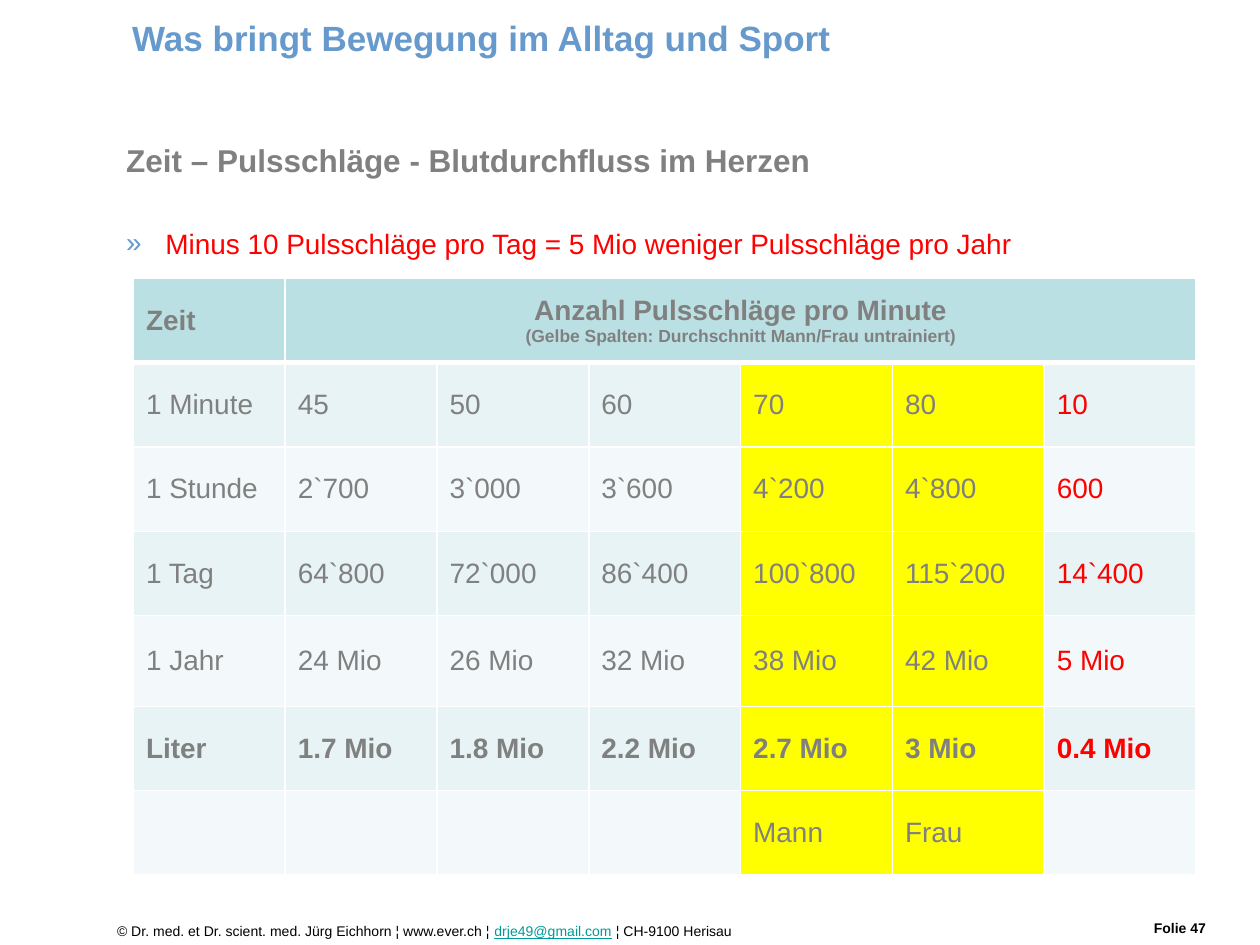
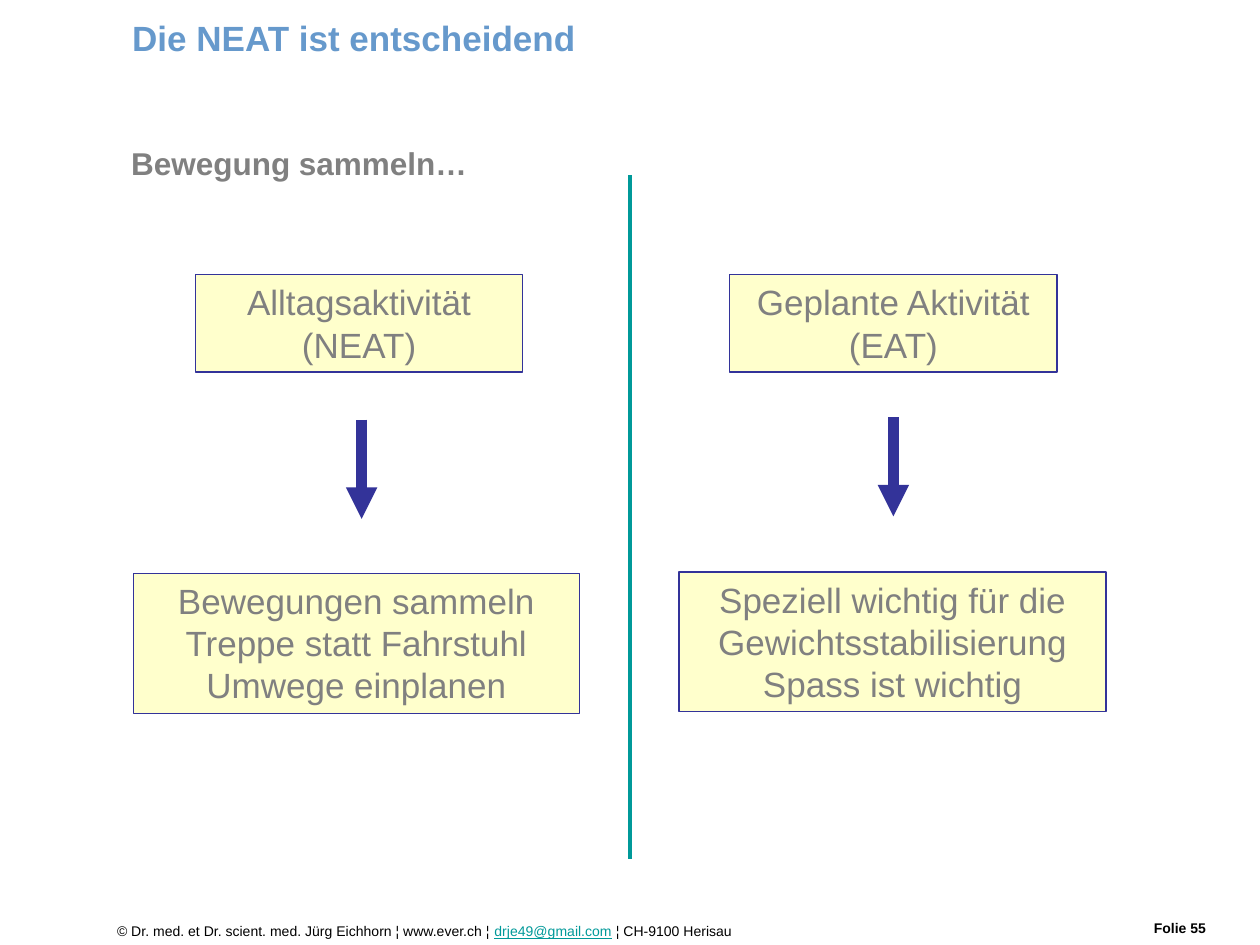
from lxml.etree import SubElement
from pptx import Presentation
from pptx.dml.color import RGBColor
from pptx.enum.shapes import MSO_CONNECTOR, MSO_SHAPE
from pptx.enum.text import MSO_ANCHOR, MSO_AUTO_SIZE, PP_ALIGN
from pptx.oxml import parse_xml
from pptx.oxml.ns import nsdecls, qn
from pptx.util import Cm, Pt

# Colours and font
FONT = "Arial"
BLUE = RGBColor(0x66, 0x99, 0xCC)
GREY = RGBColor(0x80, 0x80, 0x80)
RED = RGBColor(0xFF, 0x00, 0x00)
BLACK = RGBColor(0x00, 0x00, 0x00)
WHITE = RGBColor(0xFF, 0xFF, 0xFF)
TEAL = RGBColor(0x00, 0x99, 0x99)
NAVY = RGBColor(0x33, 0x33, 0x99)
CREAM = RGBColor(0xFF, 0xFF, 0xCC)
YELLOW = RGBColor(0xFF, 0xFF, 0x00)
HEADER_FILL = RGBColor(0xBB, 0xE0, 0xE3)
BAND_FILLS = (RGBColor(0xE7, 0xF3, 0xF4), RGBColor(0xF3, 0xF9, 0xFA))

# Content
FOOTER = (
    ("© Dr. med. et Dr. scient. med. Jürg Eichhorn ¦ www.ever.ch ¦ ", BLACK),
    ("drje49@gmail.com", TEAL),
    (" ¦ CH-9100 Herisau", BLACK),
)
PULSE = {
    "title": "Was bringt Bewegung im Alltag und Sport",
    "heading": "Zeit – Pulsschläge - Blutdurchfluss im Herzen",
    "bullet": "Minus 10 Pulsschläge pro Tag = 5 Mio weniger Pulsschläge pro Jahr",
    "number": "Folie 47",
}
PULSE_HEADER = (
    "Zeit",
    "Anzahl Pulsschläge pro Minute",
    "(Gelbe Spalten: Durchschnitt Mann/Frau untrainiert)",
)
PULSE_ROWS = (
    ("1 Minute", "45", "50", "60", "70", "80", "10"),
    ("1 Stunde", "2`700", "3`000", "3`600", "4`200", "4`800", "600"),
    ("1 Tag", "64`800", "72`000", "86`400", "100`800", "115`200", "14`400"),
    ("1 Jahr", "24 Mio", "26 Mio", "32 Mio", "38 Mio", "42 Mio", "5 Mio"),
    ("Liter", "1.7 Mio", "1.8 Mio", "2.2 Mio", "2.7 Mio", "3 Mio", "0.4 Mio"),
    ("", "", "", "", "Mann", "Frau", ""),
)
AVERAGE_COLUMNS = (4, 5)
DIFFERENCE_COLUMN = 6
ROW_HEIGHTS = (1.7, 1.7, 1.7, 1.7, 1.83, 1.7, 1.7)
COLUMN_WIDTH = 3.06

NEAT = {
    "title": "Die NEAT ist entscheidend",
    "heading": "Bewegung sammeln…",
    "number": "Folie 55",
}
# Boxes: left, top, width, height in cm, then their paragraphs
ACTIVITY_BOXES = (
    ((3.94, 5.54, 6.6, 1.96), ["Alltagsaktivität (NEAT)"]),
    ((14.71, 5.54, 6.6, 1.96), ["Geplante Aktivität (EAT)"]),
    ((2.69, 11.56, 8.99, 2.82),
     ["Bewegungen sammeln", "Treppe statt Fahrstuhl", "Umwege einplanen"]),
    ((13.69, 11.53, 8.61, 2.82),
     ["Speziell wichtig für die Gewichtsstabilisierung", "Spass ist wichtig"]),
)
ARROW_STARTS = ((7.29, 8.46), (18.01, 8.41))
ARROW_LENGTH = 2


def write(paragraph, text, size=16, color=GREY, bold=False, underline=False, align=None):
    run = paragraph.add_run()
    run.text = text
    run.font.name = FONT
    run.font.size = Pt(size)
    run.font.bold = bold
    run.font.underline = underline
    run.font.color.rgb = color
    paragraph.alignment = align


def place(shape, left, top, width, height):
    shape.left, shape.top = Cm(left), Cm(top)
    shape.width, shape.height = Cm(width), Cm(height)


def set_bullet(paragraph, character=None, color=None, indent=0):
    properties = paragraph._p.get_or_add_pPr()
    properties.set("marL", str(Cm(indent)))
    properties.set("indent", str(-Cm(indent)))
    if character:
        bullet_color = SubElement(properties, qn("a:buClr"))
        SubElement(bullet_color, qn("a:srgbClr"), val=str(color))
        SubElement(properties, qn("a:buChar"), char=character)
    else:
        SubElement(properties, qn("a:buNone"))


def add_text_box(slide, *box):
    shape = slide.shapes.add_textbox(*map(Cm, box))
    shape.text_frame.word_wrap = True
    return shape.text_frame.paragraphs[0]


def add_base_slide(presentation, content, body_left, body_top):
    """Add a slide with title, body text, footer and slide number."""
    slide = presentation.slides.add_slide(presentation.slide_layouts[1])

    title = slide.shapes.title
    place(title, 2.41, 0.13, 16.31, 1.27)
    title.text_frame.auto_size = MSO_AUTO_SIZE.NONE
    title.text_frame.vertical_anchor = MSO_ANCHOR.MIDDLE
    write(title.text_frame.paragraphs[0], content["title"], size=20, color=BLUE,
          bold=True, align=PP_ALIGN.LEFT)

    body = slide.placeholders[1]
    place(body, body_left, body_top, 21.84, 14.6)
    body.text_frame.auto_size = MSO_AUTO_SIZE.NONE
    heading = body.text_frame.paragraphs[0]
    set_bullet(heading)
    heading.space_before = Pt(0)
    write(heading, content["heading"], size=18, bold=True)
    if "bullet" in content:
        paragraph = body.text_frame.add_paragraph()
        set_bullet(paragraph, "»", BLUE, indent=0.79)
        paragraph.space_before = Pt(27)
        write(paragraph, content["bullet"], color=RED)

    footer = add_text_box(slide, 2.11, 18.47, 20.6, 0.58)
    for text, color in FOOTER:
        write(footer, text, size=8, color=color, underline=color == TEAL)
    number = add_text_box(slide, 23.01, 18.42, 2.39, 0.58)
    write(number, content["number"], size=8, color=BLACK, bold=True)
    return slide


def format_cell(cell, fill, top=1, bottom=1):
    cell.vertical_anchor = MSO_ANCHOR.MIDDLE
    cell.fill.solid()
    cell.fill.fore_color.rgb = fill
    properties = cell._tc.get_or_add_tcPr()
    borders = (("lnL", 1), ("lnR", 1), ("lnT", top), ("lnB", bottom))
    for position, (side, width) in enumerate(borders):
        properties.insert(position, parse_xml(
            f'<a:{side} {nsdecls("a")} w="{Pt(width)}"><a:solidFill>'
            f'<a:srgbClr val="{WHITE}"/></a:solidFill></a:{side}>'))


def add_pulse_table(slide):
    columns = len(PULSE_ROWS[0])
    table = slide.shapes.add_table(
        len(ROW_HEIGHTS), columns, Cm(2.69), Cm(5.61),
        Cm(COLUMN_WIDTH * columns), Cm(sum(ROW_HEIGHTS))).table
    for column in table.columns:
        column.width = Cm(COLUMN_WIDTH)
    for row, height in zip(table.rows, ROW_HEIGHTS):
        row.height = Cm(height)

    # Header row
    for column in range(columns):
        format_cell(table.cell(0, column), HEADER_FILL, bottom=3)
    table.cell(0, 1).merge(table.cell(0, columns - 1))
    time_label, pulse_label, note = PULSE_HEADER
    write(table.cell(0, 0).text_frame.paragraphs[0], time_label, bold=True)
    frame = table.cell(0, 1).text_frame
    write(frame.paragraphs[0], pulse_label, bold=True, align=PP_ALIGN.CENTER)
    write(frame.add_paragraph(), note, size=10, bold=True, align=PP_ALIGN.CENTER)

    # Value rows
    for row, values in enumerate(PULSE_ROWS, start=1):
        for column, value in enumerate(values):
            cell = table.cell(row, column)
            fill = YELLOW if column in AVERAGE_COLUMNS else BAND_FILLS[(row - 1) % 2]
            format_cell(cell, fill, top=3 if row == 1 else 1)
            if value:
                write(cell.text_frame.paragraphs[0], value,
                      color=RED if column == DIFFERENCE_COLUMN else GREY,
                      bold=values[0] == "Liter")


def add_activity_box(slide, box, lines):
    shape = slide.shapes.add_shape(MSO_SHAPE.RECTANGLE, *map(Cm, box))
    shape.shadow.inherit = False
    shape.fill.solid()
    shape.fill.fore_color.rgb = CREAM
    shape.line.color.rgb = NAVY
    shape.line.width = Pt(0.75)
    frame = shape.text_frame
    frame.word_wrap = True
    frame.vertical_anchor = MSO_ANCHOR.TOP
    for index, line in enumerate(lines):
        paragraph = frame.add_paragraph() if index else frame.paragraphs[0]
        write(paragraph, line, size=20, align=PP_ALIGN.CENTER)


def add_vertical_line(slide, x, top, bottom, color, width, arrow=False):
    connector = slide.shapes.add_connector(
        MSO_CONNECTOR.STRAIGHT, Cm(x), Cm(top), Cm(x), Cm(bottom))
    connector.line.color.rgb = color
    connector.line.width = Pt(width)
    if arrow:
        SubElement(connector.line._get_or_add_ln(), qn("a:tailEnd"), type="triangle")
    SubElement(connector._element.spPr, qn("a:effectLst"))


def main():
    presentation = Presentation()
    presentation.slide_width, presentation.slide_height = Cm(25.4), Cm(19.05)

    # Pulse table
    slide = add_base_slide(presentation, PULSE, 2.29, 2.72)
    add_pulse_table(slide)

    # Everyday and planned activity
    slide = add_base_slide(presentation, NEAT, 2.39, 2.77)
    for box, lines in ACTIVITY_BOXES:
        add_activity_box(slide, box, lines)
    add_vertical_line(slide, 12.7, 3.53, 17.32, TEAL, 2.25)
    for x, top in ARROW_STARTS:
        add_vertical_line(slide, x, top, top + ARROW_LENGTH, NAVY, 6, arrow=True)

    presentation.save("out.pptx")


if __name__ == "__main__":
    main()
